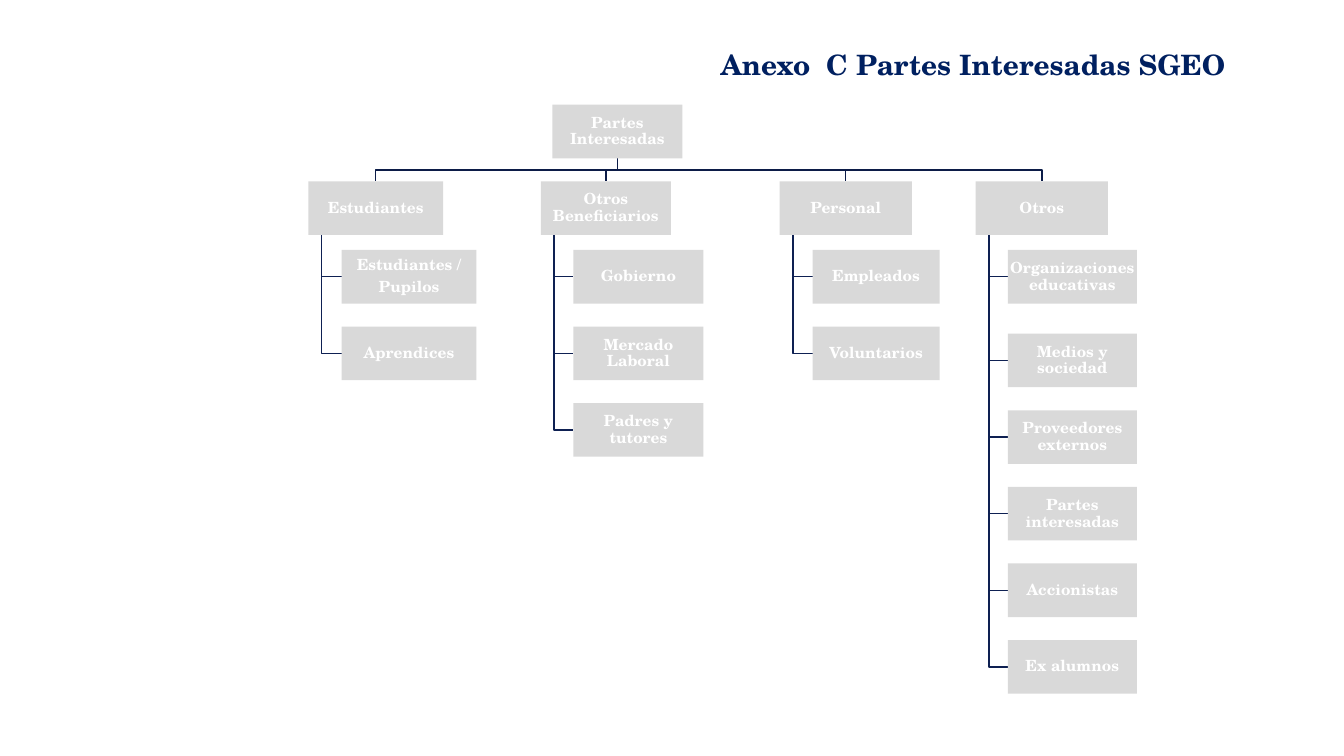
from pptx import Presentation
from pptx import util as u
from pptx.dml.color import RGBColor
from pptx.enum import shapes, text

FONT = "TeX Gyre Schola"
BOX_HEIGHT = 1.35
ROW_STEP = 1.93
BRANCH_TOP = 4.57
FIRST_ROW_TOP = 6.3
ROOT = ("Partes Interesadas", 13.92, 2.64, 3.28)

# Name, left, width, children left, children width, extra gap after first child, children
BRANCHES = [
    ("Estudiantes", 7.77, 3.4, 8.61, 3.4, 0,
     ["Estudiantes /\nPupilos", "Aprendices"]),
    ("Otros Beneficiarios", 13.63, 3.28, 14.45, 3.28, 0,
     ["Gobierno", "Mercado Laboral", "Padres y tutores"]),
    ("Personal", 19.65, 3.33, 20.48, 3.2, 0,
     ["Empleados", "Voluntarios"]),
    ("Otros", 24.59, 3.33, 25.4, 3.25, 0.18,
     ["Organizaciones educativas", "Medios y sociedad", "Proveedores externos",
      "Partes interesadas", "Accionistas", "Ex alumnos"]),
]


def color(value):
    return RGBColor.from_string(value)


def set_values(target, values):
    for name, value in values.items():
        setattr(target, name, value)


def write_paragraphs(frame, content, size, font_color, paragraph_format):
    frame.text = content
    for paragraph in frame.paragraphs:
        set_values(paragraph, paragraph_format)
        set_values(paragraph.font, {"name": FONT, "size": u.Pt(size), "bold": True})
        paragraph.font.color.rgb = color(font_color)


def add_title(slide, content, left, top, width, height):
    shape = slide.shapes.add_textbox(u.Cm(left), u.Cm(top), u.Cm(width), u.Cm(height))
    shape.text_frame.word_wrap = True
    write_paragraphs(shape.text_frame, content, 20, "002060",
                     {"line_spacing": 1.07, "space_after": u.Pt(8)})


def add_box(slide, content, left, top, width):
    shape = slide.shapes.add_shape(shapes.MSO_SHAPE.RECTANGLE, u.Cm(left), u.Cm(top),
                                   u.Cm(width), u.Cm(BOX_HEIGHT))
    shape.shadow.inherit = False
    shape.fill.solid()
    shape.fill.fore_color.rgb = color("D9D9D9")
    shape.line.fill.background()
    inset = u.Cm(0.02)
    set_values(shape.text_frame, {
        "word_wrap": True, "vertical_anchor": text.MSO_ANCHOR.MIDDLE,
        "margin_left": inset, "margin_right": inset,
        "margin_top": inset, "margin_bottom": inset})
    write_paragraphs(shape.text_frame, content, 11, "FFFFFF", {
        "alignment": text.PP_ALIGN.CENTER, "line_spacing": 0.9,
        "space_after": u.Pt(3.85)})


def add_link(slide, points, line_color):
    start, *rest = [(u.Cm(x), u.Cm(y)) for x, y in points]
    builder = slide.shapes.build_freeform(*start)
    builder.add_line_segments(rest, close=False)
    shape = builder.convert_to_shape()
    shape.shadow.inherit = False
    shape.fill.background()
    shape.line.color.rgb = color(line_color)
    shape.line.width = u.Pt(1)


def add_root(slide, name, left, top, width):
    """Root box with an elbow line down to each branch."""
    center, bottom = left + width / 2, top + BOX_HEIGHT
    middle = (bottom + BRANCH_TOP) / 2
    for _, branch_left, branch_width, *_ in BRANCHES:
        branch_center = branch_left + branch_width / 2
        add_link(slide, [(center, bottom), (center, middle),
                         (branch_center, middle), (branch_center, BRANCH_TOP)], "0C1C48")
    add_box(slide, name, left, top, width)


def add_branch(slide, name, left, width, child_left, child_width, extra_gap, children):
    """Branch box with its children hanging from a trunk at a tenth of its width."""
    trunk = left + width / 10
    for row, child in enumerate(children):
        top = FIRST_ROW_TOP + row * ROW_STEP + (extra_gap if row else 0)
        middle = top + BOX_HEIGHT / 2
        add_link(slide, [(trunk, BRANCH_TOP + BOX_HEIGHT), (trunk, middle),
                         (child_left, middle)], "0E2052")
        add_box(slide, child, child_left, top, child_width)
    add_box(slide, name, left, BRANCH_TOP, width)


def main():
    presentation = Presentation()
    presentation.slide_width = u.Cm(33.87)
    presentation.slide_height = u.Cm(19.05)
    slide = presentation.slides.add_slide(presentation.slide_layouts[6])

    # Title
    add_title(slide, "Anexo  C Partes Interesadas SGEO", 17.91, 1.02, 16.38, 1.14)

    # Organisation chart
    add_root(slide, *ROOT)
    for branch in BRANCHES:
        add_branch(slide, *branch)

    presentation.save("out.pptx")


if __name__ == "__main__":
    main()
